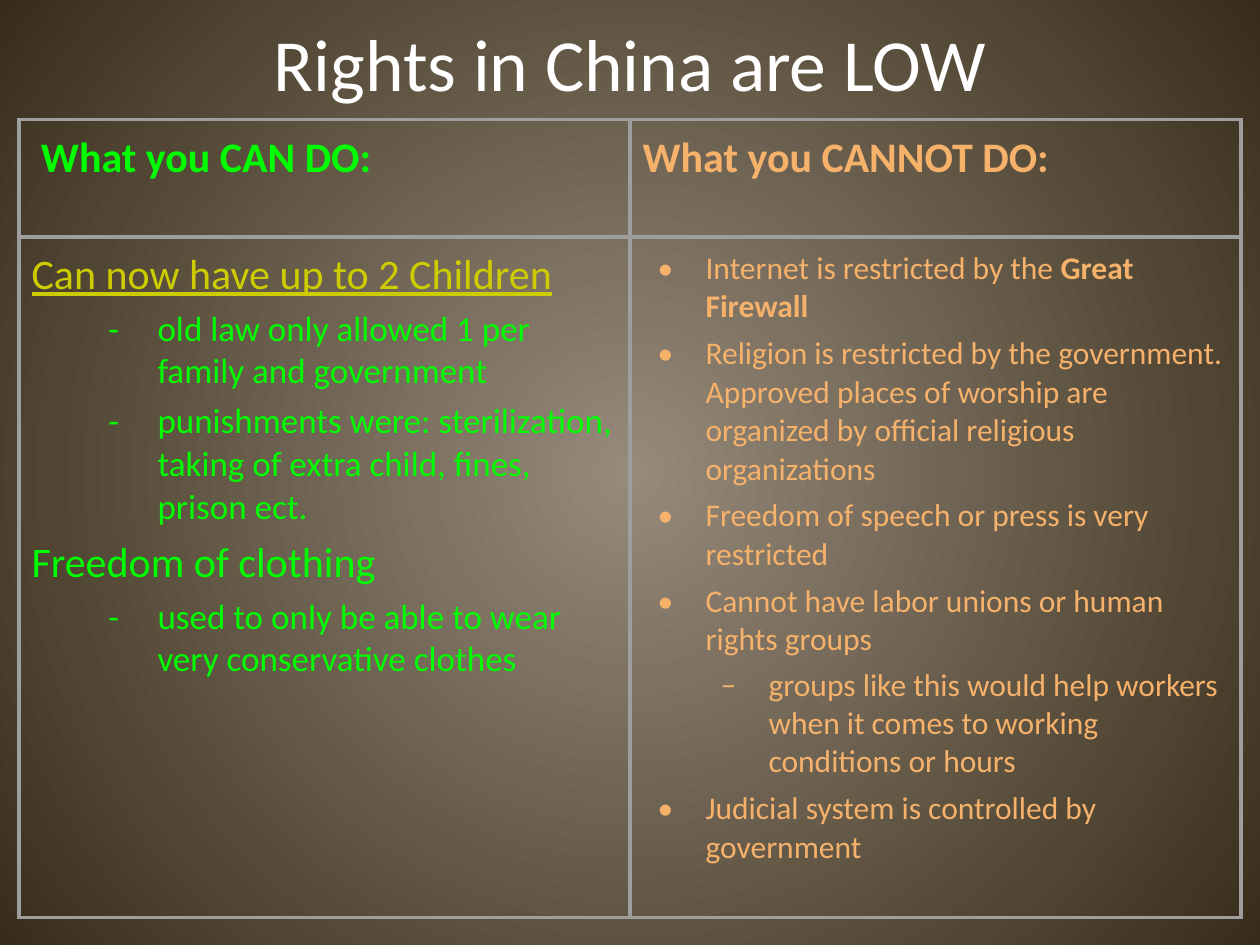
from lxml import etree
from pptx import Presentation
from pptx.dml.color import RGBColor
from pptx.enum.text import MSO_ANCHOR, PP_ALIGN
from pptx.oxml.ns import qn
from pptx.util import Inches, Pt

MID = MSO_ANCHOR.MIDDLE
TOP = MSO_ANCHOR.TOP
CENTER = PP_ALIGN.CENTER

THEME = {
    "font": "Calibri",
    "glow": "968A7B",
    "edge": "382C1A",
    "grid": "9E9E9E",
    "grid_pt": 2.25,
    "pad": 0.1,
}
STYLES = {
    "title": {"size": 42, "color": "FFFFFF"},
    "can": {"size": 24, "color": "00FF00", "bold": True},
    "cannot": {"size": 24, "color": "F6B26B", "bold": True},
    "topic": {"size": 24, "color": "00FF00"},
    "key": {"size": 24, "color": "CCCC00", "underline": True},
    "dash": {"size": 20, "color": "00FF00", "mark": "-", "left": 1, "hang": 0.39, "level": 1},
    "dot": {"size": 18, "color": "F6B26B", "mark": "•", "left": 0.5, "hang": 0.38},
    "sub": {"size": 18, "color": "F6B26B", "mark": "–", "left": 1, "hang": 0.38, "level": 1},
}
GAPS = (4.8, 4)

TITLE = "Rights in China are LOW"
CELLS = [
    [
        [("can", " What you CAN DO:")],
        [("cannot", "What you CANNOT DO:")],
    ],
    [
        [
            ("key", "Can now have up to 2 Children"),
            ("dash", "old law only allowed 1 per family and government"),
            ("dash", "punishments were: sterilization, taking of extra child, fines, prison ect."),
            ("topic", "Freedom of clothing"),
            ("dash", "used to only be able to wear very conservative clothes"),
        ],
        [
            ("dot", "Internet is restricted by the ", "Great Firewall"),
            ("dot", "Religion is restricted by the government. Approved places of worship "
                    "are organized by official religious organizations"),
            ("dot", "Freedom of speech or press is very restricted"),
            ("dot", "Cannot have labor unions or human rights groups"),
            ("sub", "groups like this would help workers when it comes to working "
                    "conditions or hours"),
            ("dot", "Judicial system is controlled by government"),
        ],
    ],
]
ROWS = (0.93, 5.4)
WIDTH = 4.85


def add_node(parent, tag, **attrs):
    return etree.SubElement(parent, qn(tag), {k: str(v) for k, v in attrs.items()})


def add_run(para, text, style, **extra):
    run = para.add_run()
    run.text = text
    look = {"bold": False, "underline": False, **style, **extra}
    font = {"name": THEME["font"], "size": Pt(look["size"]),
            "bold": look["bold"], "underline": look["underline"]}
    for key, value in font.items():
        setattr(run.font, key, value)
    run.font.color.rgb = RGBColor.from_string(look["color"])


def add_mark(para, style):
    props = para._p.get_or_add_pPr()
    props.set("marL", str(Inches(style["left"])))
    props.set("indent", str(-Inches(style["hang"])))
    add_node(add_node(props, "a:buClr"), "a:srgbClr", val=style["color"])
    add_node(props, "a:buFont", typeface=THEME["font"])
    add_node(props, "a:buChar", char=style["mark"])


def fill_text(frame, items):
    for i, (kind, text, *strong) in enumerate(items):
        para = frame.paragraphs[0] if i == 0 else frame.add_paragraph()
        style = STYLES[kind]
        para.level = style.get("level", 0)
        para.space_before = Pt(GAPS[para.level])
        if "mark" in style:
            add_mark(para, style)
        add_run(para, text, style)
        for part in strong:
            add_run(para, part, style, bold=True)


def set_pad(owner):
    for side in ("left", "right", "top", "bottom"):
        setattr(owner, f"margin_{side}", Inches(THEME["pad"]))


def set_edges(cell):
    props = cell._tc.get_or_add_tcPr()
    for i, side in enumerate("LRTB"):
        line = add_node(props, f"a:ln{side}", w=Pt(THEME["grid_pt"]))
        add_node(add_node(line, "a:solidFill"), "a:srgbClr", val=THEME["grid"])
        props.insert(i, line)


def set_back(slide):
    fill = slide.background.fill
    fill.gradient()
    for stop, name in zip(fill.gradient_stops, ("glow", "edge")):
        stop.color.rgb = RGBColor.from_string(THEME[name])
    grad = slide._element.find(".//" + qn("a:gradFill"))
    line = grad.find(qn("a:lin"))
    path = add_node(grad, "a:path", path="circle")
    add_node(path, "a:fillToRect", l=50000, t=50000, r=50000, b=50000)
    grad.replace(line, path)


def add_title(slide):
    box = slide.shapes.add_textbox(Inches(0.5), Inches(-0.13), Inches(9), Inches(1.25))
    frame = box.text_frame
    frame.word_wrap = True
    frame.vertical_anchor = MID
    set_pad(frame)
    frame.paragraphs[0].alignment = CENTER
    add_run(frame.paragraphs[0], TITLE, STYLES["title"])


def add_grid(slide):
    count = len(CELLS[0])
    table = slide.shapes.add_table(
        len(ROWS), count, Inches(0.15), Inches(0.95),
        Inches(WIDTH * count), Inches(sum(ROWS))).table
    table.first_row = table.horz_banding = False
    for col in table.columns:
        col.width = Inches(WIDTH)
    for r, (high, row) in enumerate(zip(ROWS, CELLS)):
        table.rows[r].height = Inches(high)
        for c, items in enumerate(row):
            cell = table.cell(r, c)
            cell.fill.background()
            cell.vertical_anchor = TOP
            set_pad(cell)
            set_edges(cell)
            fill_text(cell.text_frame, items)


def main():
    deck = Presentation()
    deck.slide_width, deck.slide_height = Inches(10), Inches(7.5)
    slide = deck.slides.add_slide(deck.slide_layouts[6])
    set_back(slide)
    add_title(slide)
    add_grid(slide)
    deck.save("out.pptx")


if __name__ == "__main__":
    main()
